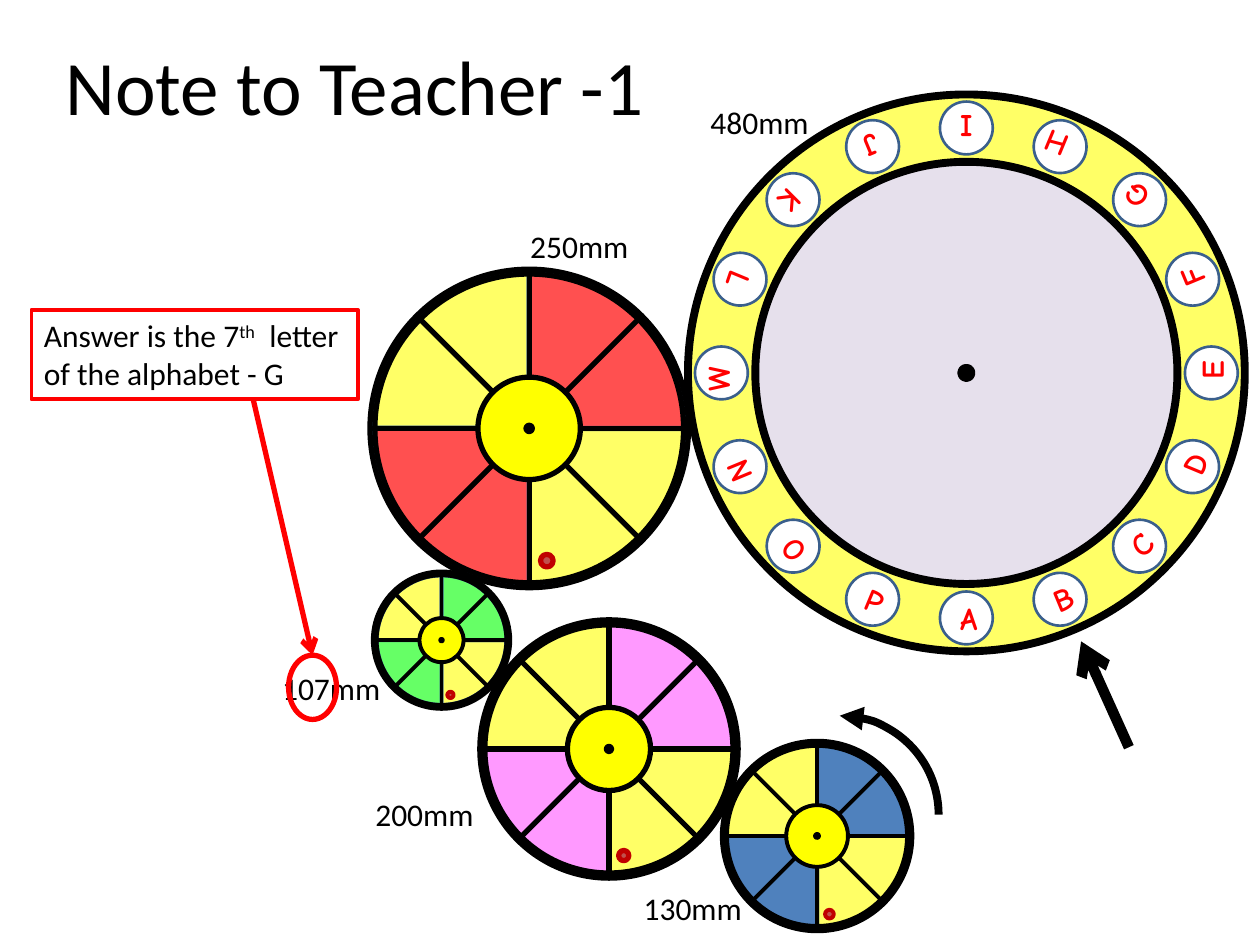
import math
from dataclasses import dataclass

from lxml import etree
from pptx import Presentation
from pptx.dml.color import RGBColor
from pptx.enum import shapes, text
from pptx.oxml import ns
from pptx.util import Pt

BLACK, WHITE, RED = "000000", "FFFFFF", "FF0000"
YELLOW, HUB_YELLOW, OUTLINE = "FFFF66", "FFFF00", "3A5F8C"
SHAPE = shapes.MSO_SHAPE


@dataclass
class Wheel:
    label: str
    label_at: tuple
    center: tuple
    sector_size: float
    rings: tuple      # (diameter, line width), outermost first
    hub_size: float
    pin_size: float
    marker: tuple     # offset from the centre, then diameter
    accent: str
    line_width: float
    sector_line: str = OUTLINE


WHEELS = [
    Wheel("130mm", (360.7, 504.7), (466.9, 477.7), 104.4,
          ((108, 2.25), (106.6, 4.5), (103.7, 3)), 35.3, 2.2,
          (7.1, 44.7, 5), "4F81BD", 2.25),
    Wheel("200mm", (207.4, 450.7), (348, 428), 139,
          ((147.6, 3), (143.3, 3), (141.8, 3)), 47.5, 2.9,
          (8.4, 60.9, 5.8), "FF99FF", 3, sector_line=""),
    Wheel("107mm", (154.1, 378.7), (252.3, 365.8), 74,
          ((78.5, 2.25), (76.3, 2.25), (75.6, 2.25), (74.2, 2.25)), 25.2, 1.4,
          (5.1, 31.3, 3.6), "66FF66", 2.25),
    Wheel("250mm", (295.9, 126), (302.4, 244.8), 180,
          ((182, 3), (176.4, 3)), 58.5, 3.6,
          (10.1, 75.6, 7.2), "FF5050", 3),
]


def rgb(color):
    return RGBColor.from_string(color)


def add_outlined(parent, kind, box, fill, line, width):
    shape = parent.add_shape(kind, *map(Pt, box))
    shape.shadow.inherit = False
    if fill:
        shape.fill.solid()
        shape.fill.fore_color.rgb = rgb(fill)
    else:
        shape.fill.background()
    shape.line.color.rgb = rgb(line)
    shape.line.width = Pt(width)
    return shape


def add_disc(parent, center, size, fill, line, width):
    x, y = center
    box = (x - size / 2, y - size / 2, size, size)
    return add_outlined(parent, SHAPE.OVAL, box, fill, line, width)


def add_line(parent, start, end, color, width):
    line = parent.add_connector(shapes.MSO_CONNECTOR.STRAIGHT,
                                *map(Pt, (*start, *end)))
    line.line.color.rgb = rgb(color)
    line.line.width = Pt(width)
    etree.SubElement(line._element.spPr, ns.qn("a:effectLst"))
    return line


def add_arrowhead(stroke, end, kind):
    outline = stroke.line._get_or_add_ln()
    etree.SubElement(outline, ns.qn("a:" + end)).set("type", kind)


def add_run(paragraph, words, size, color=BLACK, font="Calibri", bold=None):
    run = paragraph.add_run()
    run.text = words
    run.font.size = Pt(size)
    run.font.name = font
    run.font.bold = bold
    run.font.color.rgb = rgb(color)
    return run


def add_label(parent, at, words):
    label = parent.add_textbox(*map(Pt, (*at, 71.3, 28.8))).text_frame
    label.word_wrap = False
    add_run(label.paragraphs[0], words, 18)


def add_title(parent):
    title = parent.add_textbox(*map(Pt, (-0.7, 3.6, 406.8, 90))).text_frame
    title.word_wrap = True
    title.vertical_anchor = text.MSO_ANCHOR.MIDDLE
    title.paragraphs[0].alignment = text.PP_ALIGN.CENTER
    add_run(title.paragraphs[0], "Note to Teacher -1", 44)


def add_letter_wheel(parent):
    wheel = parent.add_group_shape().shapes
    center = x, y = 552.2, 213.1
    for size, fill in ((318.2, YELLOW), (241.2, "E6E0EC"), (5.8, BLACK)):
        add_disc(wheel, center, size, fill, BLACK, 4.5)

    # Letters run anticlockwise from the bottom, with their feet outwards
    letters = "ABCDEFGHIJKLMNOP"
    for i, letter in enumerate(letters):
        turn = 360 * i / len(letters)
        angle = math.radians(turn)
        spot = (x + 140 * math.sin(angle), y + 140 * math.cos(angle))
        badge = add_disc(wheel, spot, 30.2, WHITE, OUTLINE, 1.5)
        badge.rotation = -turn % 360
        badge.text_frame.vertical_anchor = text.MSO_ANCHOR.MIDDLE
        caption = badge.text_frame.paragraphs[0]
        caption.alignment = text.PP_ALIGN.CENTER
        add_run(caption, letter, 18, RED, "Comic Neue", True)


def add_gear(parent, wheel):
    gear = parent.add_group_shape().shapes
    x, y = wheel.center
    half = wheel.sector_size / 2

    # Quarter sectors: opposite ones share a colour
    quarter = 54  # 90 degrees in adjustment units
    for start, color in ((0, YELLOW), (quarter, wheel.accent)):
        for rotation in (0, 180):
            sector = add_outlined(
                gear, SHAPE.PIE, (x - half, y - half, 2 * half, 2 * half),
                color, wheel.sector_line or color, wheel.line_width)
            sector.adjustments[0] = start
            sector.adjustments[1] = start + quarter
            sector.rotation = rotation

    # Spokes across the whole wheel
    reach = wheel.rings[0][0] / 2
    for degrees in (90, 0, 45, 135):
        dx = reach * math.cos(math.radians(degrees))
        dy = reach * math.sin(math.radians(degrees))
        add_line(gear, (x - dx, y - dy), (x + dx, y + dy), BLACK, wheel.line_width)

    # Hub, rim, pin and marker
    add_disc(gear, wheel.center, wheel.hub_size, HUB_YELLOW, BLACK, wheel.line_width)
    for size, width in wheel.rings:
        add_disc(gear, wheel.center, size, None, BLACK, width)
    add_disc(gear, wheel.center, wheel.pin_size, BLACK, BLACK, wheel.line_width)
    dx, dy, size = wheel.marker
    add_disc(gear, (x + dx, y + dy), size, "C0504D", "C00000", wheel.line_width)


def add_direction_arrows(parent):
    turn = add_outlined(parent, SHAPE.ARC, (423.4, 409, 113, 113), None, BLACK, 4.5)
    add_arrowhead(turn, "headEnd", "triangle")
    pointer = add_line(parent, (645.1, 427), (617.8, 366.5), BLACK, 6)
    add_arrowhead(pointer, "tailEnd", "arrow")


def add_answer(parent):
    digit_ring = add_outlined(parent, SHAPE.OVAL, (164.9, 374.4, 27.4, 36.7),
                              None, RED, 3)
    pointer = add_line(parent, (144.7, 228.2), (178.6, 374.4), RED, 3)
    pointer.end_connect(digit_ring, 0)
    add_arrowhead(pointer, "tailEnd", "arrow")

    answer = add_outlined(parent, SHAPE.RECTANGLE, (18, 177.1, 186.5, 51.1),
                          None, RED, 2.25).text_frame
    answer.word_wrap = False
    answer.vertical_anchor = text.MSO_ANCHOR.TOP
    first, second = answer.paragraphs[0], answer.add_paragraph()
    add_run(first, "Answer is the 7", 18)
    ordinal = add_run(first, "th", 18)
    ordinal._r.get_or_add_rPr().set("baseline", "30000")
    add_run(first, "  letter", 18)
    add_run(second, "of the alphabet - G", 18)
    for line in (first, second):
        line.alignment = text.PP_ALIGN.LEFT


def main():
    deck = Presentation()
    deck.slide_width, deck.slide_height = Pt(720), Pt(540)
    parts = deck.slides.add_slide(deck.slide_layouts[6]).shapes

    add_title(parts)
    add_letter_wheel(parts)
    for wheel in WHEELS:
        add_gear(parts, wheel)
    add_direction_arrows(parts)
    for wheel in WHEELS:
        add_label(parts, wheel.label_at, wheel.label)
    add_label(parts, (398.9, 55.4), "480mm")
    add_answer(parts)
    deck.save("out.pptx")


if __name__ == "__main__":
    main()
